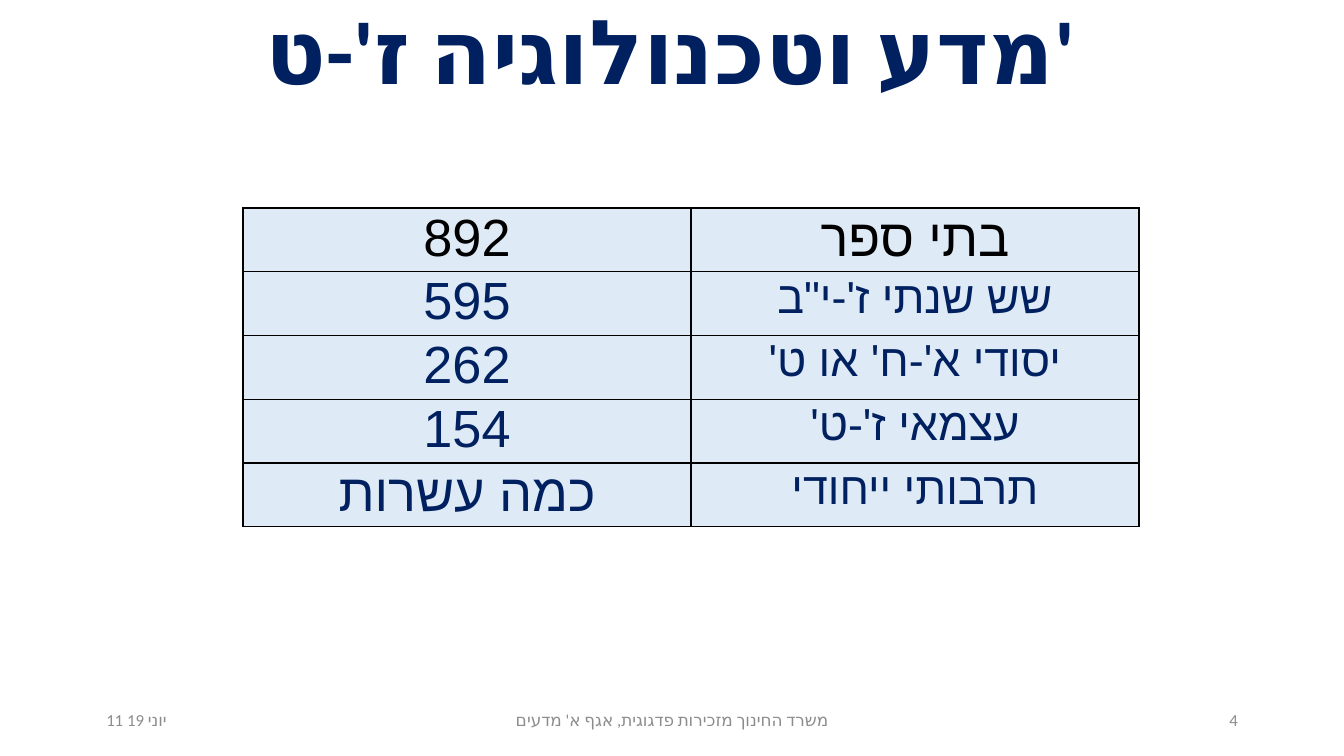
"""Build a slide with a table of school counts for science and technology."""
from lxml.etree import SubElement
from pptx import Presentation
from pptx.dml.color import RGBColor
from pptx.enum.lang import MSO_LANGUAGE_ID
from pptx.enum.text import MSO_ANCHOR, PP_ALIGN
from pptx.oxml.ns import qn
from pptx.util import Emu, Pt

COLORS = {"navy": "002060", "black": "000000", "gray": "8C8C8C", "pale": "DEEBF7"}
SCHOOLS = [
    ("892", "בתי ספר"),
    ("595", "שש שנתי ז'-י\"ב"),
    ("262", "יסודי א'-ח' או ט'"),
    ("154", "עצמאי ז'-ט'"),
    ("כמה עשרות", "תרבותי ייחודי"),
]
FOOTERS = [
    (93, 302, "11 יוני 19", PP_ALIGN.LEFT),
    (445, 454, "משרד החינוך מזכירות פדגוגית, אגף א' מדעים", PP_ALIGN.CENTER),
    (949, 302, "4", PP_ALIGN.RIGHT),
]


def px(length):
    return Emu(round(length * 914400 / 134.4))


def color(name):
    return RGBColor.from_string(COLORS[name])


def format_paragraph(paragraph, font_name, size, color_name, alignment, bold=False):
    paragraph.alignment = alignment
    for run in paragraph.runs:
        font = run.font
        font.name, font.size, font.bold = font_name, Pt(size), bold
        font.color.rgb = color(color_name)
        font.language_id = MSO_LANGUAGE_ID.HEBREW
        complex_script = SubElement(run._r.get_or_add_rPr(), qn("a:cs"))
        complex_script.set("typeface", font_name)


def add_text(slide, box, text, size, color_name, alignment, anchor, bold=False):
    shape = slide.shapes.add_textbox(*map(px, box))
    text_frame = shape.text_frame
    text_frame.word_wrap = True
    text_frame.vertical_anchor = anchor
    text_frame.text = text
    paragraph = text_frame.paragraphs[0]
    format_paragraph(paragraph, "Calibri", size, color_name, alignment, bold)
    return paragraph


def add_borders(cell):
    properties = cell._tc.get_or_add_tcPr()
    for side in ("lnL", "lnR", "lnT", "lnB"):
        line = SubElement(properties, qn(f"a:{side}"), w=str(Pt(0.75)))
        fill = SubElement(line, qn("a:solidFill"))
        SubElement(fill, qn("a:srgbClr"), val=COLORS["black"])


def fill_cell(cell, text, size, color_name):
    add_borders(cell)
    cell.fill.solid()
    cell.fill.fore_color.rgb = color("pale")
    cell.margin_left = cell.margin_right = px(13)
    cell.margin_top, cell.margin_bottom = px(1), 0
    cell.text_frame.text = text
    paragraph = cell.text_frame.paragraphs[0]
    format_paragraph(paragraph, "Arial", size, color_name, PP_ALIGN.CENTER)
    paragraph._p.get_or_add_pPr().set("rtl", "1")


def add_school_table(slide):
    height = px(312)
    frame = slide.shapes.add_table(len(SCHOOLS), 2, px(243), px(208), px(896), height)
    table = frame.table
    for row_index, values in enumerate(SCHOOLS):
        color_name = "navy" if row_index else "black"
        for column_index, text in enumerate(values):
            size = 24 if row_index and column_index else 28
            fill_cell(table.cell(row_index, column_index), text, size, color_name)


def main():
    presentation = Presentation()
    presentation.slide_width, presentation.slide_height = px(1344), px(756)
    slide = presentation.slides.add_slide(presentation.slide_layouts[6])
    title = add_text(slide, (69, 1, 1203, 134), "מדע וטכנולוגיה ז'-ט'", 48, "navy",
                     PP_ALIGN.CENTER, MSO_ANCHOR.TOP, bold=True)
    title.line_spacing = 0.9
    for left, width, text, alignment in FOOTERS:
        add_text(slide, (left, 700, width, 40), text, 9, "gray", alignment, MSO_ANCHOR.MIDDLE)
    add_school_table(slide)
    presentation.save("out.pptx")


if __name__ == "__main__":
    main()
